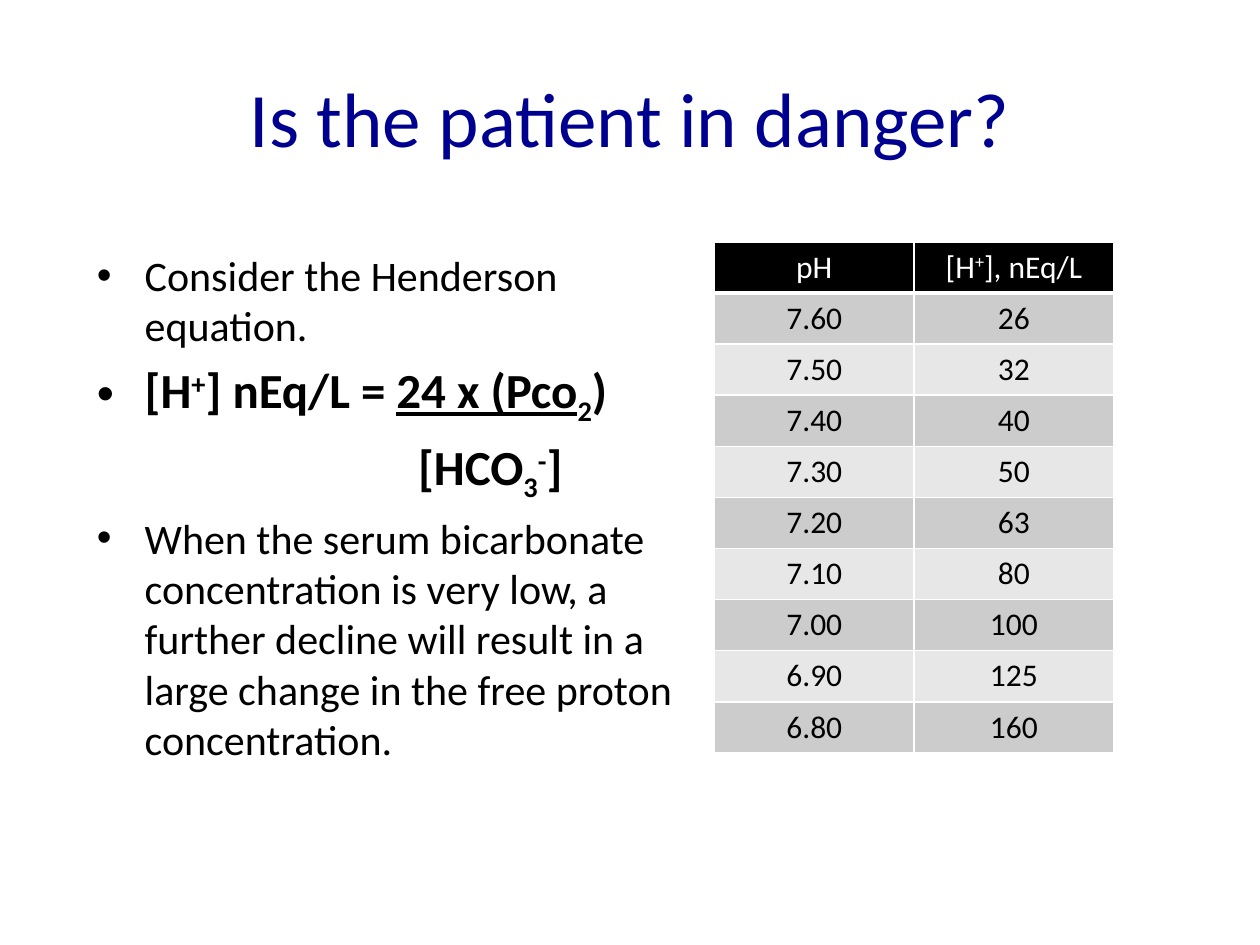
"""Build a slide on the Henderson equation with a table of pH against proton concentration."""
import dataclasses
import typing

import pptx
import pptx.dml.color
import pptx.enum.text
import pptx.oxml
import pptx.oxml.ns
import pptx.util

Inches = pptx.util.Inches
Pt = pptx.util.Pt
RGBColor = pptx.dml.color.RGBColor
PP_ALIGN = pptx.enum.text.PP_ALIGN
MSO_ANCHOR = pptx.enum.text.MSO_ANCHOR

BLACK = RGBColor(0x00, 0x00, 0x00)
WHITE = RGBColor(0xFF, 0xFF, 0xFF)
NAVY = RGBColor(0x00, 0x00, 0x90)
BANDS = (RGBColor(0xCC, 0xCC, 0xCC), RGBColor(0xE7, 0xE7, 0xE7))
FONT = "Calibri"
SUPER, SUB = 30, -25
HANG = Inches(0.38)


@dataclasses.dataclass(frozen=True)
class Run:
    text: str
    baseline: int = 0
    underline: bool = False


@dataclasses.dataclass(frozen=True)
class Para:
    runs: tuple[Run, ...]
    size: int = 24
    bold: bool = False
    bullet: bool = False
    margin: int = 0
    align: PP_ALIGN = PP_ALIGN.LEFT
    color: RGBColor = BLACK
    space: float = 0


@dataclasses.dataclass(frozen=True)
class Box:
    left: float
    top: float
    width: float
    height: float

    def lengths(self) -> tuple[int, ...]:
        return tuple(Inches(v) for v in dataclasses.astuple(self))


TITLE = Para((Run("Is the patient in danger?"),), 44, align=PP_ALIGN.CENTER, color=NAVY)
BODY = (
    Para((Run("Consider the Henderson equation."),), bullet=True, margin=HANG, space=0.2),
    Para(
        (Run("[H"), Run("+", SUPER), Run("] nEq/L = "), Run("24 x (Pco", underline=True),
         Run("2", SUB), Run(")")),
        28, bold=True, bullet=True, margin=HANG, space=0.2,
    ),
    Para(
        (Run("[HCO"), Run("3", SUB), Run("-", SUPER), Run("]")),
        28, bold=True, margin=Inches(2.55), space=0.2,
    ),
    Para(
        (Run("When the serum bicarbonate concentration is very low, a further decline "
             "will result in a large change in the free proton concentration."),),
        bullet=True, margin=HANG, space=0.2,
    ),
)
HEADER = ((Run("pH"),), (Run("[H"), Run("+", SUPER), Run("], nEq/L")))
VALUES = (
    ("7.60", "26"), ("7.50", "32"), ("7.40", "40"), ("7.30", "50"), ("7.20", "63"),
    ("7.10", "80"), ("7.00", "100"), ("6.90", "125"), ("6.80", "160"),
)


def set_attrs(target: typing.Any, values: dict[str, typing.Any]) -> None:
    for name, value in values.items():
        setattr(target, name, value)


def add_xml(parent: typing.Any, tag: str, body: str) -> None:
    ns = pptx.oxml.ns.nsdecls("a")
    parent.append(pptx.oxml.parse_xml(f"<a:{tag} {ns} {body}"))


def fill_paragraph(p: typing.Any, para: Para) -> None:
    set_attrs(p, {"alignment": para.align, "space_before": Pt(para.size * para.space)})
    pPr = p._p.get_or_add_pPr()
    pPr.set("marL", str(int(para.margin)))
    pPr.set("indent", str(-int(HANG) if para.bullet else 0))
    if para.bullet:
        add_xml(pPr, "buFont", 'typeface="Arial"/>')
        add_xml(pPr, "buChar", 'char="•"/>')
    for run in para.runs:
        r = p.add_run()
        r.text = run.text
        set_attrs(r.font, {"name": FONT, "size": Pt(para.size), "bold": para.bold,
                           "underline": run.underline})
        r.font.color.rgb = para.color
        if run.baseline:
            r.font._element.set("baseline", str(run.baseline * 1000))


def add_text(s: typing.Any, box: Box, paras: tuple[Para, ...], anchor: MSO_ANCHOR) -> None:
    tf = s.shapes.add_textbox(*box.lengths()).text_frame
    set_attrs(tf, {"word_wrap": True, "vertical_anchor": anchor})
    for i, para in enumerate(paras):
        fill_paragraph(tf.add_paragraph() if i else tf.paragraphs[0], para)


def fill_cell(cell: typing.Any, runs: tuple[Run, ...], color: RGBColor,
              fill: RGBColor, bottom: float) -> None:
    tcPr = cell._tc.get_or_add_tcPr()
    for side, width in {"L": 1, "R": 1, "T": 1, "B": bottom}.items():
        add_xml(tcPr, f"ln{side}", f'w="{int(Pt(width))}"><a:solidFill>'
                f'<a:srgbClr val="{WHITE}"/></a:solidFill></a:ln{side}>')
    cell.fill.solid()
    cell.fill.fore_color.rgb = fill
    para = Para(runs, 18, align=PP_ALIGN.CENTER, color=color)
    fill_paragraph(cell.text_frame.paragraphs[0], para)


def add_ph_table(s: typing.Any, box: Box) -> None:
    rows = [HEADER, *(tuple((Run(v),) for v in row) for row in VALUES)]
    table = s.shapes.add_table(len(rows), len(HEADER), *box.lengths()).table
    set_attrs(table, {"first_row": False, "horz_banding": False})
    for i, row in enumerate(rows):
        color, fill, bottom = (BLACK, BANDS[(i - 1) % 2], 1) if i else (WHITE, BLACK, 3)
        for j, runs in enumerate(row):
            fill_cell(table.cell(i, j), runs, color, fill, bottom)


def main() -> None:
    prs = pptx.Presentation()
    set_attrs(prs, {"slide_width": Inches(10), "slide_height": Inches(7.5)})
    s = prs.slides.add_slide(prs.slide_layouts[6])
    add_ph_table(s, Box(5.67, 1.92, 3.17, 4))
    add_text(s, Box(0.67, 1.93, 4.8, 4.5), BODY, MSO_ANCHOR.TOP)
    add_text(s, Box(0.5, 0.3, 9, 1.25), (TITLE,), MSO_ANCHOR.MIDDLE)
    prs.save("out.pptx")


if __name__ == "__main__":
    main()
